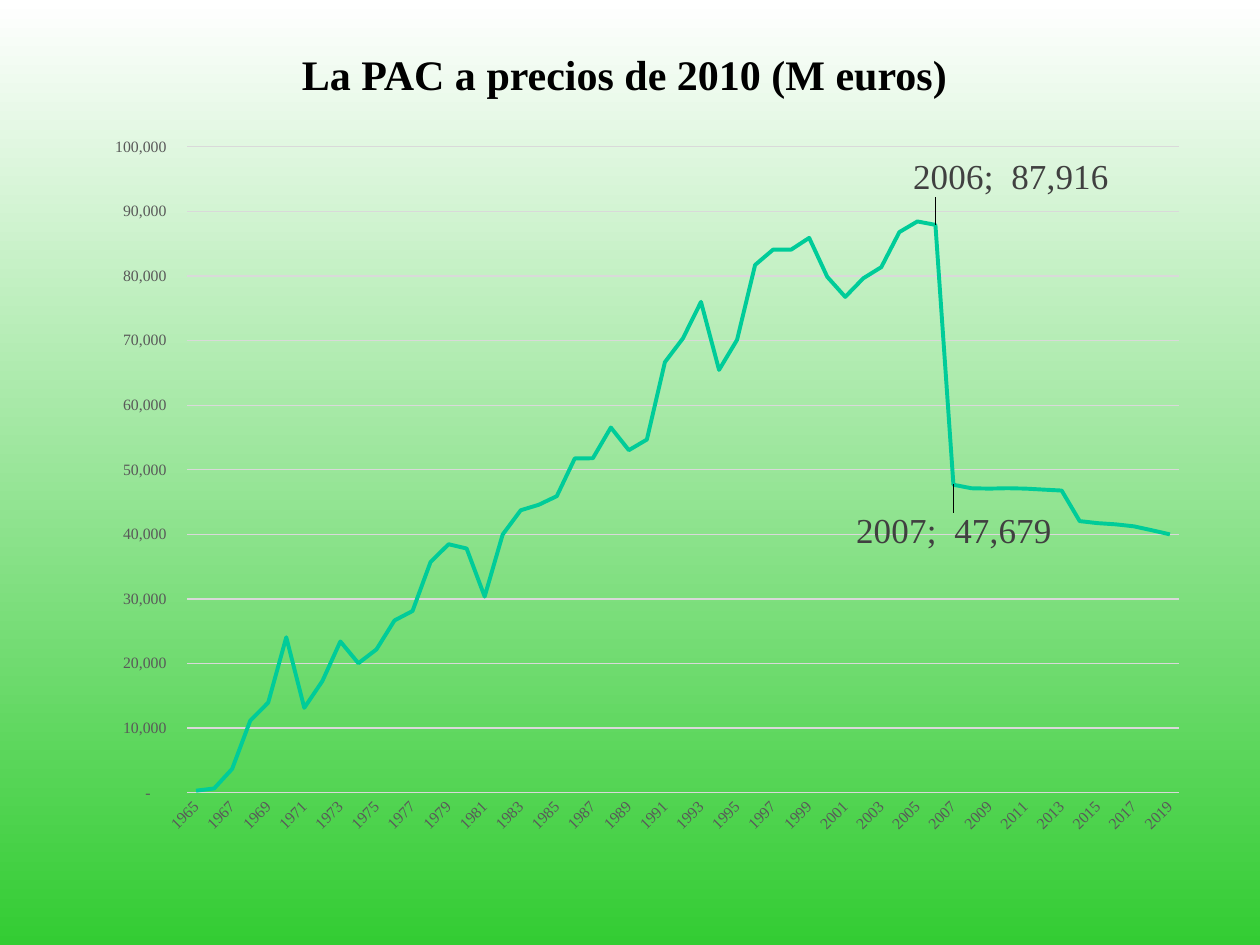
from lxml import etree
from pptx import Presentation
from pptx.chart.data import CategoryChartData
from pptx.dml.color import RGBColor
from pptx.enum.chart import XL_CHART_TYPE as ChartType
from pptx.enum.chart import XL_LABEL_POSITION as LabelPosition
from pptx.enum.chart import XL_TICK_MARK as TickMark
from pptx.enum.text import MSO_ANCHOR as Anchor
from pptx.enum.text import PP_ALIGN as Align
from pptx.oxml import parse_xml
from pptx.oxml.ns import nsdecls, qn
from pptx.util import Inches, Pt

BLACK = RGBColor(0x00, 0x00, 0x00)
WHITE = RGBColor(0xFF, 0xFF, 0xFF)
GREEN = RGBColor(0x33, 0xCC, 0x33)
TEAL = RGBColor(0x00, 0xCC, 0x99)
AXIS_GRAY = RGBColor(0x59, 0x59, 0x59)
LABEL_GRAY = RGBColor(0x40, 0x40, 0x40)
GRID_GRAY = RGBColor(0xD9, 0xD9, 0xD9)

FIRST_YEAR = 1965
SPENDING = [
    313, 658, 3685, 11145, 13960,
    24063, 13133, 17269, 23414, 20038, 22187, 26659, 28124, 35707, 38461,
    37805, 30362, 39963, 43725, 44575, 45918, 51756, 51781, 56540, 53033,
    54676, 66665, 70343, 75997, 65457, 70113, 81714, 84083, 84080, 85904,
    79873, 76761, 79645, 81370, 86792, 88444, 87916, 47679, 47136, 47080,
    47146, 47080, 46927, 46779, 42041, 41732, 41547, 41236, 40627, 39993,
]
NUMBER_FORMAT = r'_-* #,##0\ _€_-;\-* #,##0\ _€_-;_-* "-"??\ _€_-;_-@_-'
# Year -> label offset from its point, in percent of the chart's size
CALLOUTS = {2006: (-2.3, -6.2), 2007: (-8.6, 6.2)}
PLOT_AREA = {"x": 13.6, "y": 2.9, "w": 83.3, "h": 84.6}


def manual_layout(inner=False, **percents):
    target = '<c:layoutTarget val="inner"/>' if inner else ""
    modes = "".join(f'<c:{key}Mode val="edge"/>' for key in "xy") if inner else ""
    places = "".join(
        f'<c:{key} val="{percent / 100:.3f}"/>' for key, percent in percents.items()
    )
    return parse_xml(
        f'<c:layout {nsdecls("c")}><c:manualLayout>{target}{modes}{places}'
        "</c:manualLayout></c:layout>"
    )


class SlideBuilder:
    font_name = "Times New Roman"

    def __init__(self, presentation):
        self.width = presentation.slide_width
        self.height = presentation.slide_height
        self.slide = presentation.slides.add_slide(presentation.slide_layouts[5])

    def box(self, left, top, width, height):
        """Turn percents of the slide's size into lengths."""
        return (int(left * self.width / 100), int(top * self.height / 100),
                int(width * self.width / 100), int(height * self.height / 100))

    def style_font(self, font, size, color, bold=False):
        font.name = self.font_name
        font.size = Pt(size)
        font.bold = bold
        font.color.rgb = color

    def background(self, top_color, bottom_color):
        fill = self.slide.background.fill
        fill.gradient()
        fill.gradient_angle = 270
        for stop, color, position in zip(
            fill.gradient_stops, (top_color, bottom_color), (0, 1)
        ):
            stop.color.rgb = color
            stop.position = position

    def title(self, text, *percents):
        title = self.slide.shapes.title
        title.left, title.top, title.width, title.height = self.box(*percents)
        title.text_frame.text = text
        title.text_frame.vertical_anchor = Anchor.MIDDLE
        paragraph = title.text_frame.paragraphs[0]
        paragraph.alignment = Align.CENTER
        self.style_font(paragraph.runs[0].font, 24, BLACK, bold=True)

    def line_chart(self, first_year, values, *percents):
        data = CategoryChartData(number_format=NUMBER_FORMAT)
        data.categories = [str(first_year + i) for i in range(len(values))]
        data.add_series("Series 1", values)
        chart = self.slide.shapes.add_chart(
            ChartType.LINE, *self.box(*percents), data
        ).chart
        chart.has_legend = False
        chart.has_title = False
        self.style_font(chart.font, 10, BLACK)
        plot_area = chart.plots[0]._element.getparent()
        for layout in plot_area.findall(qn("c:layout")):
            plot_area.remove(layout)
        plot_area.insert(0, manual_layout(inner=True, **PLOT_AREA))

        chart.plots[0].vary_by_categories = False
        series = chart.plots[0].series[0]
        series.smooth = False
        series.format.line.color.rgb = TEAL
        series.format.line.width = Pt(2.25)
        series.data_labels.show_value = False
        self.axes(chart)
        return series

    def axes(self, chart):
        for axis in (chart.category_axis, chart.value_axis):
            axis.major_tick_mark = axis.minor_tick_mark = TickMark.NONE
            self.style_font(axis.tick_labels.font, 9, AXIS_GRAY)
        value_axis = chart.value_axis
        value_axis.minimum_scale, value_axis.maximum_scale = 0, 100000
        value_axis.major_unit = 10000
        value_axis.tick_labels.number_format = NUMBER_FORMAT
        value_axis.tick_labels.number_format_is_linked = False
        value_axis.format.line.fill.background()
        category_axis = chart.category_axis
        category_axis.has_major_gridlines = False
        for line in (category_axis.format.line, value_axis.major_gridlines.format.line):
            line.color.rgb = GRID_GRAY
            line.width = Pt(0.75)
        body = category_axis._element.find(qn("c:txPr")).find(qn("a:bodyPr"))
        body.set("rot", "-2700000")
        body.set("vert", "horz")

    def callout(self, series, index, x, y):
        """Label one point with its year and value, moved off the line."""
        label = series.points[index].data_label
        self.style_font(label.font, 20, LABEL_GRAY)
        label.position = LabelPosition.RIGHT
        element = label._dLbl
        element.find(qn("c:idx")).addnext(manual_layout(x=x, y=y))
        number_format = etree.Element(qn("c:numFmt"))
        number_format.set("formatCode", NUMBER_FORMAT)
        number_format.set("sourceLinked", "0")
        element.find(qn("c:txPr")).addprevious(number_format)
        for flag in ("c:showVal", "c:showCatName"):
            element.find(qn(flag)).set("val", "1")
        for flag in ("c:showLegendKey", "c:showSerName", "c:showPercent"):
            element.find(qn(flag)).set("val", "0")
        separator = etree.SubElement(element, qn("c:separator"))
        separator.text = "; "

    def leader_lines(self, series):
        labels = series.data_labels._element
        leader = labels.find(qn("c:showLeaderLines"))
        if leader is None:
            leader = etree.SubElement(labels, qn("c:showLeaderLines"))
        leader.set("val", "1")


def main():
    presentation = Presentation()
    presentation.slide_width, presentation.slide_height = Inches(10), Inches(7.5)
    builder = SlideBuilder(presentation)
    builder.background(WHITE, GREEN)
    builder.title("La PAC a precios de 2010 (M euros)", 2.7, 1.73, 93.7, 12.13)
    series = builder.line_chart(FIRST_YEAR, SPENDING, 2, 13.2, 94.5, 80.8)
    for year, offset in CALLOUTS.items():
        builder.callout(series, year - FIRST_YEAR, *offset)
    builder.leader_lines(series)
    presentation.save("out.pptx")


if __name__ == "__main__":
    main()
